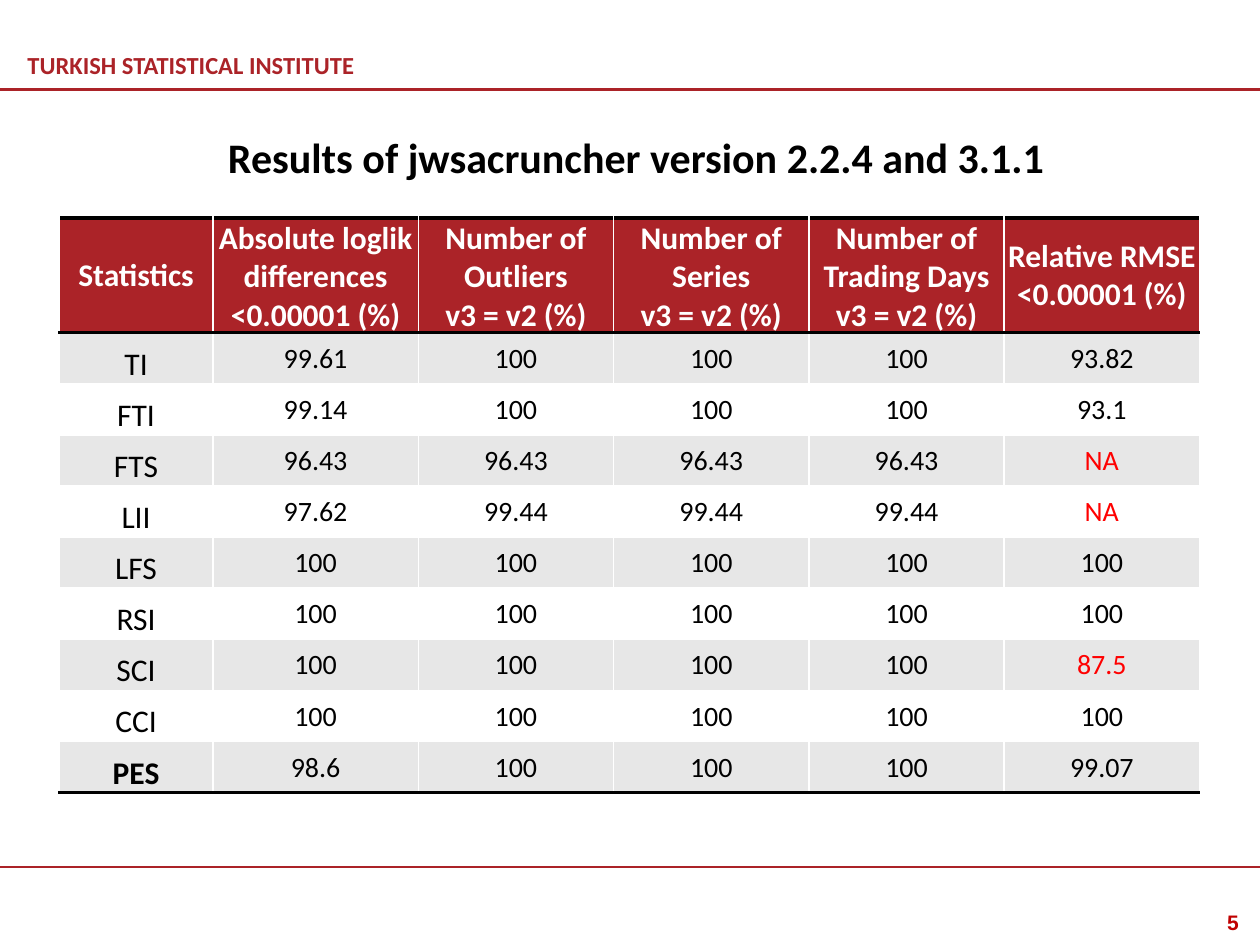
from lxml import etree
from pptx import Presentation
from pptx.dml.color import RGBColor
from pptx.enum.shapes import MSO_CONNECTOR
from pptx.enum.text import MSO_ANCHOR, PP_ALIGN
from pptx.oxml.ns import qn
from pptx.util import Inches, Pt

LEFT, CENTER, RIGHT = PP_ALIGN.LEFT, PP_ALIGN.CENTER, PP_ALIGN.RIGHT
TOP, MIDDLE, BOTTOM = MSO_ANCHOR.TOP, MSO_ANCHOR.MIDDLE, MSO_ANCHOR.BOTTOM
STRAIGHT = MSO_CONNECTOR.STRAIGHT

COLORS = {
    "brand": "AB2328",
    "number": "C00000",
    "alert": "FF0000",
    "text": "000000",
    "band": "E7E7E7",
    "white": "FFFFFF",
}

HEADINGS = [
    "Statistics",
    "Absolute loglik differences\n<0.00001 (%)",
    "Number of Outliers\nv3 = v2 (%)",
    "Number of Series\nv3 = v2 (%)",
    "Number of Trading Days\nv3 = v2 (%)",
    "Relative RMSE\n<0.00001 (%)",
]
RESULTS = [
    ["TI", "99.61", "100", "100", "100", "93.82"],
    ["FTI", "99.14", "100", "100", "100", "93.1"],
    ["FTS", "96.43", "96.43", "96.43", "96.43", "NA"],
    ["LII", "97.62", "99.44", "99.44", "99.44", "NA"],
    ["LFS", "100", "100", "100", "100", "100"],
    ["RSI", "100", "100", "100", "100", "100"],
    ["SCI", "100", "100", "100", "100", "87.5"],
    ["CCI", "100", "100", "100", "100", "100"],
    ["PES", "98.6", "100", "100", "100", "99.07"],
]
ALERTS = {"NA", "87.5"}
COLUMN_WIDTHS = [1.22, 1.63] + [1.55] * 4
HEADER_HEIGHT = 0.91
TABLE_BOX = (0.47, 1.73, 9.06, 4.56)


class SlideBuilder:
    def __init__(self, slide, font="Calibri"):
        self.slide = slide
        self.font = font

    def color(self, name):
        return RGBColor.from_string(COLORS[name])

    def format_text(self, frame, text, size, color, align=CENTER, bold=False, font=None):
        frame.text = text
        values = {"name": font or self.font, "size": Pt(size), "bold": bold}
        for paragraph in frame.paragraphs:
            paragraph.alignment = align
            for attribute, value in values.items():
                setattr(paragraph.font, attribute, value)
            paragraph.font.color.rgb = self.color(color)

    def title(self, text, box, size):
        heading = self.slide.shapes.title
        heading.left, heading.top, heading.width, heading.height = map(Inches, box)
        heading.text_frame.word_wrap = True
        heading.text_frame.vertical_anchor = TOP
        self.format_text(heading.text_frame, text, size, "text", bold=True)

    def label(self, text, box, anchor=TOP, **style):
        frame = self.slide.shapes.add_textbox(*map(Inches, box)).text_frame
        frame.word_wrap = True
        frame.vertical_anchor = anchor
        self.format_text(frame, text, bold=True, **style)

    def rule(self, y):
        line = self.slide.shapes.add_connector(
            STRAIGHT, Inches(0), Inches(y), Inches(10), Inches(y))
        line.line.color.rgb = self.color("brand")
        line.line.width = Pt(1.5)
        etree.SubElement(line._element.spPr, qn("a:effectLst"))

    def border(self, cell, side):
        properties = cell._tc.get_or_add_tcPr()
        line = etree.Element(qn(f"a:{side}"), w=str(Pt(2)))
        fill = etree.SubElement(line, qn("a:solidFill"))
        etree.SubElement(fill, qn("a:srgbClr"), val=COLORS["text"])
        fills = properties.find(qn("a:solidFill"))
        fills.addprevious(line)

    def cell(self, cell, text, fill, anchor, borders, **style):
        margins = {"margin_left": 0.01, "margin_right": 0.01,
                   "margin_top": 0.01, "margin_bottom": 0}
        for attribute, value in margins.items():
            setattr(cell, attribute, Inches(value))
        cell.vertical_anchor = anchor
        cell.fill.solid()
        cell.fill.fore_color.rgb = self.color(fill)
        self.format_text(cell.text_frame, text, **style)
        for side in borders:
            self.border(cell, side)

    def table(self, headings, results, box):
        table = self.slide.shapes.add_table(
            len(results) + 1, len(headings), *map(Inches, box)).table
        for column, width in zip(table.columns, COLUMN_WIDTHS):
            column.width = Inches(width)
        row_height = (box[3] - HEADER_HEIGHT) / len(results)
        for index, row in enumerate(table.rows):
            row.height = Inches(row_height if index else HEADER_HEIGHT)
        for c, heading in enumerate(headings):
            self.cell(table.cell(0, c), heading, "brand", MIDDLE, ["lnT", "lnB"],
                      size=18, color="white", bold=True)
        for r, values in enumerate(results, start=1):
            fill = "band" if r % 2 else "white"
            borders = ["lnB"] if r == len(results) else []
            for c, value in enumerate(values):
                self.cell(table.cell(r, c), value, fill, MIDDLE if c else BOTTOM, borders,
                          size=16 if c else 18,
                          color="alert" if value in ALERTS else "text",
                          bold=value == "PES")


def main():
    deck = Presentation()
    deck.slide_width, deck.slide_height = Inches(10), Inches(7.5)
    builder = SlideBuilder(deck.slides.add_slide(deck.slide_layouts[5]))
    builder.label("TURKISH STATISTICAL INSTITUTE", (0.12, 0.32, 3.54, 0.39), MIDDLE,
                  size=14, color="brand", align=LEFT)
    for y in (0.71, 6.88):
        builder.rule(y)
    builder.label("5", (7.6, 7.17, 2.33, 0.52),
                  size=12, color="number", align=RIGHT, font="Arial")
    builder.title("Results of jwsacruncher version 2.2.4 and 3.1.1", (0.72, 0.99, 8.66, 0.5), 24)
    builder.table(HEADINGS, RESULTS, TABLE_BOX)
    deck.save("out.pptx")


if __name__ == "__main__":
    main()
